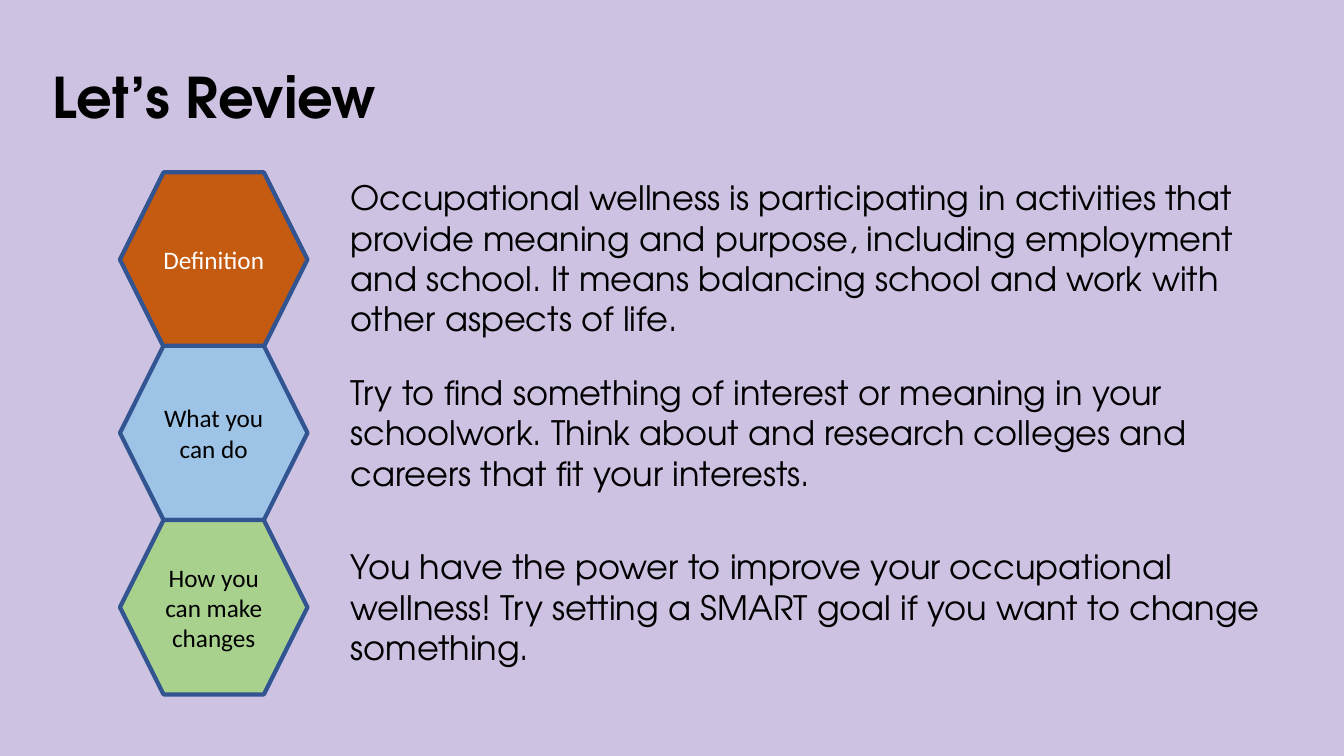
from dataclasses import dataclass

from pptx import Presentation
from pptx.dml.color import RGBColor
from pptx.enum.shapes import MSO_SHAPE as Shape
from pptx.enum.text import MSO_ANCHOR as Anchor, MSO_AUTO_SIZE as AutoSize, PP_ALIGN as Align
from pptx.slide import Slide
from pptx.text.text import TextFrame
from pptx.util import Pt

EMU_PER_PX = 9144  # 100 px to the inch
SLIDE_WIDTH, SLIDE_HEIGHT = 1333, 750
HEXAGON_LEFT, HEXAGON_WIDTH, HEXAGON_HEIGHT = 119, 186, 173
FIRST_TOP, ROW_PITCH = 171, 172.5
SUMMARY_LEFT, SUMMARY_WIDTH = 338, 947

COLORS = {
    "lavender": "CEC2E2",
    "orange": "C55A11",
    "blue": "9DC3E6",
    "green": "A9D18E",
    "outline": "325491",
    "black": "000000",
    "white": "FFFFFF",
}
TITLE_FORMAT = {"name": "TeX Gyre Adventor", "size": Pt(40), "bold": True}
SUMMARY_FORMAT = {"name": "TeX Gyre Adventor", "size": Pt(24)}
LABEL_FORMAT = {"name": "Calibri", "size": Pt(18)}


@dataclass(frozen=True)
class Topic:
    label: str
    fill: str
    label_color: str
    summary: str
    summary_height: int


TOPICS = [
    Topic("Definition", "orange", "white",
          "Occupational wellness is participating in activities that provide meaning and "
          "purpose, including employment and school. It means balancing school and work "
          "with other aspects of life.", 212),
    Topic("What you can do", "blue", "black",
          "Try to find something of interest or meaning in your schoolwork. Think about "
          "and research colleges and careers that fit your interests.", 131),
    Topic("How you can make changes", "green", "black",
          "You have the power to improve your occupational wellness! Try setting a SMART "
          "goal if you want to change something.", 131),
]


def px(length: int) -> int:
    return length * EMU_PER_PX


def rgb(name: str) -> RGBColor:
    return RGBColor.from_string(COLORS[name])


def write(frame: TextFrame, text: str, font_format: dict, color: str) -> None:
    frame.word_wrap = True
    run = frame.paragraphs[0].add_run()
    run.text = text
    for attribute, value in font_format.items():
        setattr(run.font, attribute, value)
    run.font.color.rgb = rgb(color)


def add_text(slide: Slide, left: int, top: int, width: int, height: int,
             text: str, font_format: dict) -> None:
    frame = slide.shapes.add_textbox(px(left), px(top), px(width), px(height)).text_frame
    write(frame, text, font_format, "black")
    frame.auto_size = AutoSize.SHAPE_TO_FIT_TEXT


def add_hexagon(slide: Slide, top: int, topic: Topic) -> None:
    hexagon = slide.shapes.add_shape(Shape.HEXAGON, px(HEXAGON_LEFT), px(top),
                                     px(HEXAGON_WIDTH), px(HEXAGON_HEIGHT))
    hexagon.shadow.inherit = False
    hexagon.fill.solid()
    hexagon.fill.fore_color.rgb = rgb(topic.fill)
    hexagon.line.color.rgb = rgb("outline")
    hexagon.line.width = Pt(3)
    label = hexagon.text_frame
    write(label, topic.label, LABEL_FORMAT, topic.label_color)
    label.vertical_anchor = Anchor.MIDDLE
    label.paragraphs[0].alignment = Align.CENTER


def add_topic(slide: Slide, top: int, topic: Topic) -> None:
    """Draw a hexagon with its summary centred beside it, never starting above it."""
    add_hexagon(slide, top, topic)
    offset = max(0, (HEXAGON_HEIGHT - topic.summary_height) // 2)
    add_text(slide, SUMMARY_LEFT, top + offset, SUMMARY_WIDTH, topic.summary_height,
             topic.summary, SUMMARY_FORMAT)


def main() -> None:
    deck = Presentation()
    deck.slide_width, deck.slide_height = px(SLIDE_WIDTH), px(SLIDE_HEIGHT)
    slide = deck.slides.add_slide(deck.slide_layouts[6])
    slide.background.fill.solid()
    slide.background.fill.fore_color.rgb = rgb("lavender")

    add_text(slide, 42, 57, 1156, 77, "Let’s Review", TITLE_FORMAT)
    for row, topic in enumerate(TOPICS):
        add_topic(slide, FIRST_TOP + int(row * ROW_PITCH), topic)

    deck.save("out.pptx")


if __name__ == "__main__":
    main()
